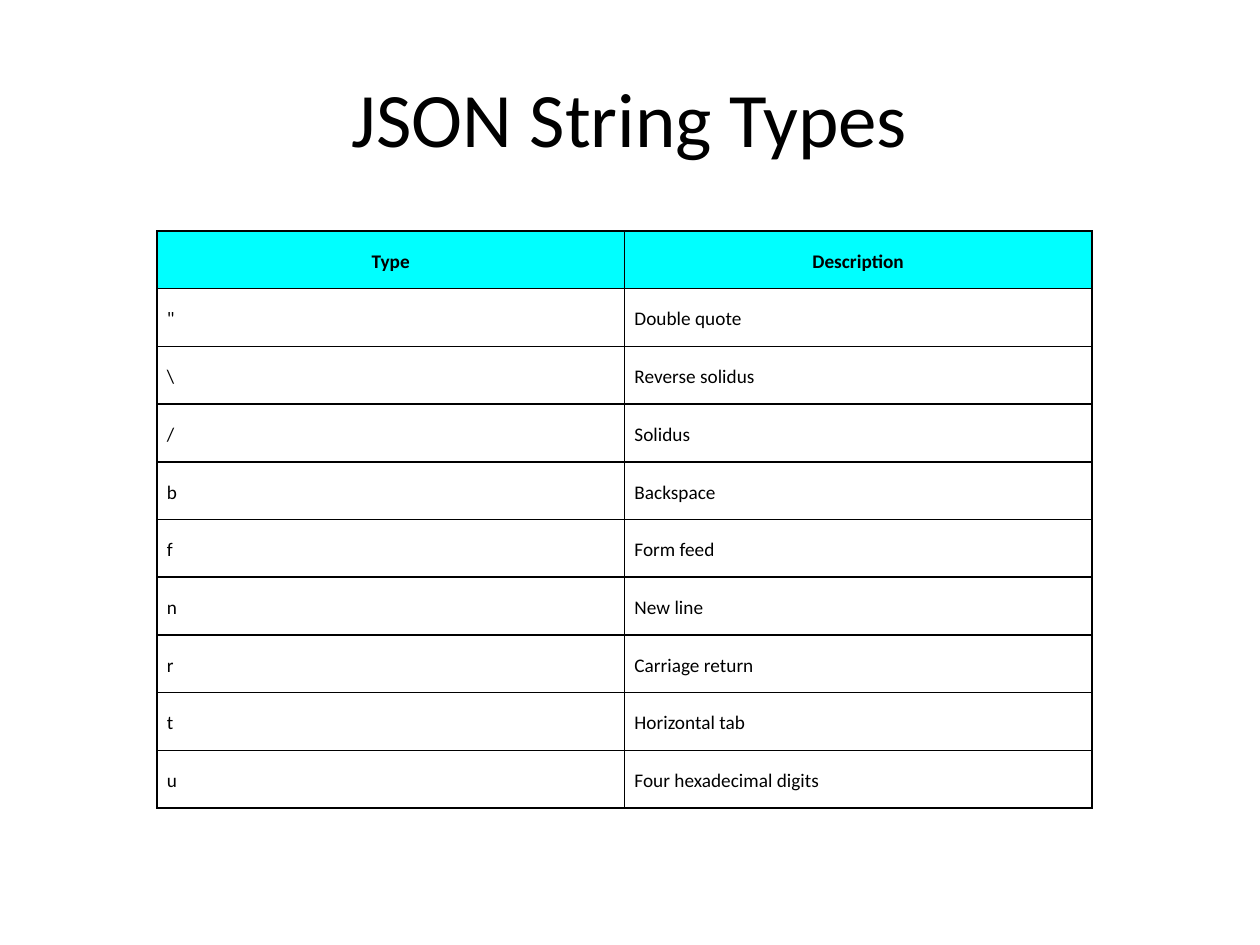
from dataclasses import dataclass

from lxml import etree
from pptx import Presentation
from pptx import util as u
from pptx.dml.color import RGBColor
from pptx.enum import text
from pptx.oxml.ns import qn

EMU_PER_PX = 914400 / 126


@dataclass(frozen=True)
class Theme:
    font: str = "Calibri"
    ink: str = "000000"
    header_fill: str = "00FFFF"
    title_size: int = 44
    table_size: int = 11
    border_width: int = 1


THEME = Theme()

HEADINGS = ("Type", "Description")
STRING_TYPES = [
    ('"', "Double quote"),
    ("\\", "Reverse solidus"),
    ("/", "Solidus"),
    ("b", "Backspace"),
    ("f", "Form feed"),
    ("n", "New line"),
    ("r", "Carriage return"),
    ("t", "Horizontal tab"),
    ("u", "Four hexadecimal digits"),
]


def px(length):
    return u.Emu(round(length * EMU_PER_PX))


def add_run(paragraph, words, size, bold=False):
    run = paragraph.add_run()
    run.text = words
    run.font.name = THEME.font
    run.font.size = u.Pt(size)
    run.font.bold = bold
    run.font.color.rgb = RGBColor.from_string(THEME.ink)


def add_title(slide, words, left, top, width, height):
    title = slide.shapes.add_textbox(px(left), px(top), px(width), px(height))
    frame = title.text_frame
    frame.word_wrap = True
    frame.vertical_anchor = text.MSO_ANCHOR.MIDDLE
    heading = frame.paragraphs[0]
    heading.alignment = text.PP_ALIGN.CENTER
    add_run(heading, words, THEME.title_size)


def add_borders(cell):
    properties = cell._tc.get_or_add_tcPr()
    for side in ("a:lnL", "a:lnR", "a:lnT", "a:lnB"):
        border = etree.SubElement(properties, qn(side), w=str(u.Pt(THEME.border_width)))
        fill = etree.SubElement(border, qn("a:solidFill"))
        etree.SubElement(fill, qn("a:srgbClr"), val=THEME.ink)


def fill_cell(cell, words, is_header):
    cell.margin_left = cell.margin_right = px(10)
    cell.margin_top = cell.margin_bottom = px(10)
    cell.vertical_anchor = text.MSO_ANCHOR.MIDDLE

    # Borders come before the fill in the cell's properties
    add_borders(cell)
    if is_header:
        cell.fill.solid()
        cell.fill.fore_color.rgb = RGBColor.from_string(THEME.header_fill)
    else:
        cell.fill.background()

    entry = cell.text_frame.paragraphs[0]
    entry.alignment = text.PP_ALIGN.CENTER if is_header else text.PP_ALIGN.LEFT
    entry.line_spacing = 1.15
    entry.space_after = u.Pt(10)
    add_run(entry, words, THEME.table_size, bold=is_header)


def add_type_table(slide, entries, left, top, width, height):
    frame = slide.shapes.add_table(
        len(entries), len(entries[0]), px(left), px(top), px(width), px(height)
    )
    table = frame.table
    table.horz_banding = False
    for row, values in enumerate(entries):
        for column, words in enumerate(values):
            fill_cell(table.cell(row, column), words, is_header=row == 0)


def main():
    deck = Presentation()
    deck.slide_width, deck.slide_height = px(1260), px(945)
    slide = deck.slides.add_slide(deck.slide_layouts[6])

    # Heading
    add_title(slide, "JSON String Types", 63, 38, 1134, 157)

    # Escape characters and their meanings
    add_type_table(slide, [HEADINGS, *STRING_TYPES], 157, 231, 935, 577)

    deck.save("out.pptx")


if __name__ == "__main__":
    main()
